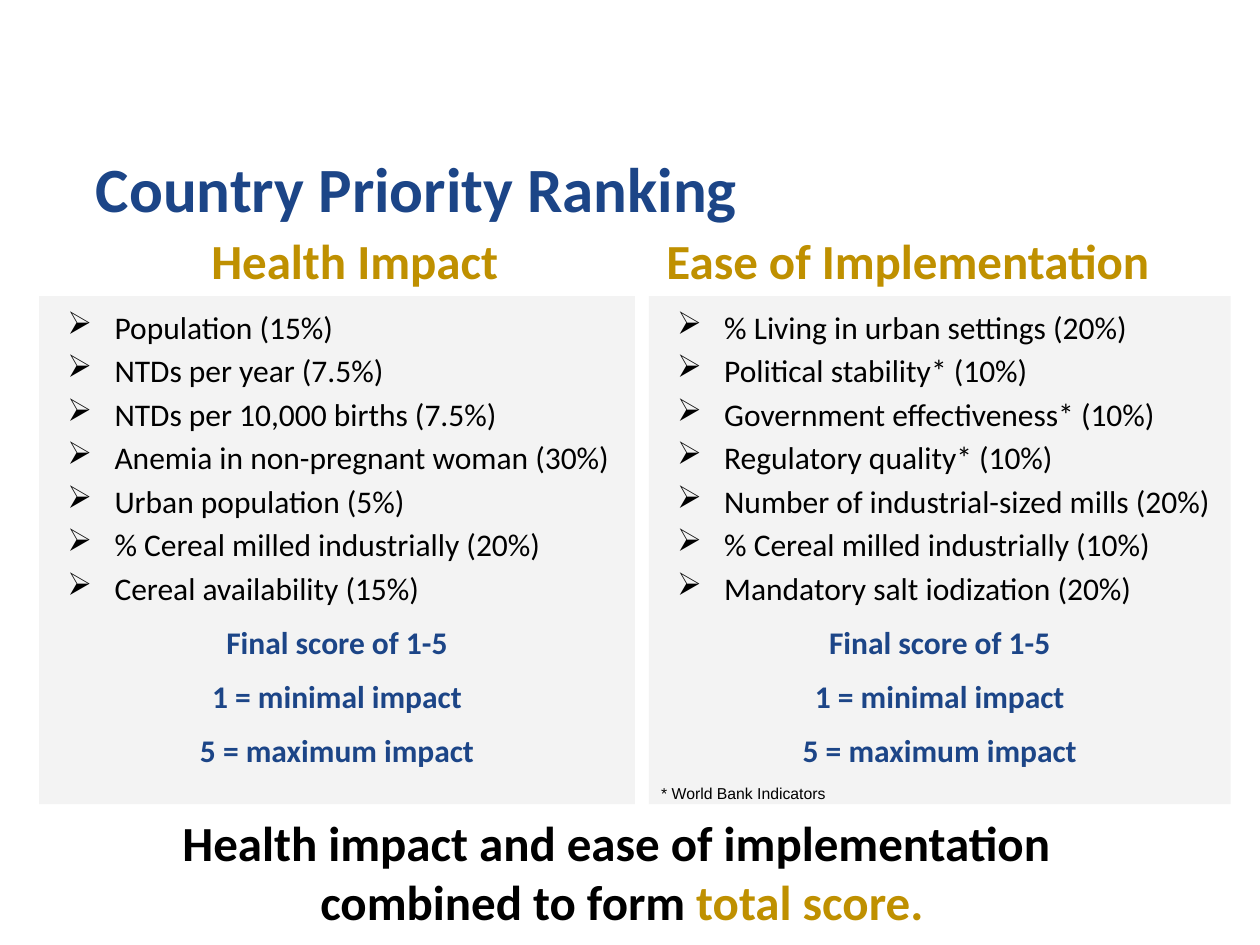
import pptx
import pptx.dml.color
import pptx.enum.shapes
import pptx.enum.text
import pptx.util
from lxml import etree
from pptx.util import Cm

BLUE, GOLD, BLACK, PANEL = "1C4587", "BF9000", "000000", "F3F3F3"
CENTER = pptx.enum.text.PP_ALIGN.CENTER
LEFT = pptx.enum.text.PP_ALIGN.LEFT
ANCHOR = pptx.enum.text.MSO_ANCHOR

HEALTH_FACTORS = [
    "Population (15%)",
    "NTDs per year (7.5%)",
    "NTDs per 10,000 births (7.5%)",
    "Anemia in non-pregnant woman (30%)",
    "Urban population (5%)",
    "% Cereal milled industrially (20%)",
    "Cereal availability (15%)",
]
EASE_FACTORS = [
    "% Living in urban settings (20%)",
    "Political stability* (10%)",
    "Government effectiveness* (10%)",
    "Regulatory quality* (10%)",
    "Number of industrial-sized mills (20%)",
    "% Cereal milled industrially (10%)",
    "Mandatory salt iodization (20%)",
]
SCORE_LINES = ["Final score of 1-5", "1 = minimal impact", "5 = maximum impact"]


def color(value):
    """Turn a hex string into a colour."""
    return pptx.dml.color.RGBColor.from_string(value)


def add_run(paragraph, text, size, fill, bold=False, font="Calibri"):
    """Add one formatted run to a paragraph."""
    run = paragraph.add_run()
    run.text = text
    run.font.name = font
    run.font.size = pptx.util.Pt(size)
    run.font.bold = bold
    run.font.color.rgb = color(fill)


def add_paragraph(frame, alignment=LEFT, line_spacing=1.0, before=0):
    """Return the next paragraph of a frame, using its empty first one."""
    first = frame.paragraphs[0]
    paragraph = frame.add_paragraph() if first.runs else first
    paragraph.alignment = alignment
    paragraph.line_spacing = line_spacing
    paragraph.space_before = pptx.util.Pt(before)
    return paragraph


def add_bullet(paragraph):
    """Give a paragraph a black arrow bullet with a hanging indent."""
    properties = paragraph._p.get_or_add_pPr()
    properties.set("marL", str(Cm(1.27)))
    properties.set("indent", str(-Cm(0.95)))
    namespace = pptx.oxml.ns.qn("a:buClr").removesuffix("buClr")
    bullet_color = etree.SubElement(properties, namespace + "buClr")
    etree.SubElement(bullet_color, namespace + "srgbClr", val=BLACK)
    etree.SubElement(properties, namespace + "buChar", char="➢")


def add_title(slide, text):
    """Place and format the title placeholder."""
    title = slide.shapes.title
    title.left, title.top, title.width, title.height = Cm(1.68), Cm(2.03), Cm(21.9), Cm(3.68)
    title.text_frame.vertical_anchor = ANCHOR.MIDDLE
    paragraph = add_paragraph(title.text_frame, line_spacing=0.9)
    add_run(paragraph, text, 36, BLUE, bold=True)


def add_heading(slide, text, left, width):
    """Add a gold heading that sits on top of a panel."""
    box = slide.shapes.add_textbox(left, Cm(3.68), width, Cm(2.29))
    box.text_frame.word_wrap = True
    box.text_frame.vertical_anchor = ANCHOR.BOTTOM
    add_run(add_paragraph(box.text_frame, CENTER, 0.9), text, 28, GOLD, bold=True)


def add_panel(slide, factors, left, width, footnote=None):
    """Add a grey panel with weighted factors, score lines and a footnote."""
    panel = slide.shapes.add_shape(
        pptx.enum.shapes.MSO_SHAPE.RECTANGLE, left, Cm(5.97), width, Cm(10.24)
    )
    panel.shadow.inherit = False
    panel.fill.solid()
    panel.fill.fore_color.rgb = color(PANEL)
    panel.line.fill.background()
    frame = panel.text_frame
    frame.word_wrap = True
    frame.vertical_anchor = ANCHOR.TOP
    for factor in factors:
        paragraph = add_paragraph(frame, line_spacing=1.15)
        add_bullet(paragraph)
        add_run(paragraph, factor, 18, BLACK)
    for line in SCORE_LINES:
        add_run(add_paragraph(frame, CENTER, 1.15, 6), line, 18, BLUE, bold=True)
    if footnote:
        add_run(add_paragraph(frame, LEFT, 0.9, 10), footnote, 9, BLACK, font="Arial")


def add_conclusion(slide, lines):
    """Add the closing statement, given as lines of (text, colour) runs."""
    box = slide.shapes.add_textbox(Cm(3.3), Cm(16.26), Cm(18.47), Cm(2.64))
    box.text_frame.word_wrap = False
    box.text_frame.auto_size = pptx.enum.text.MSO_AUTO_SIZE.SHAPE_TO_FIT_TEXT
    for line in lines:
        paragraph = add_paragraph(box.text_frame, CENTER)
        for text, fill in line:
            add_run(paragraph, text, 28, fill, bold=True)


def main():
    """Build the country ranking slide."""
    presentation = pptx.Presentation()
    presentation.slide_width, presentation.slide_height = Cm(25.4), Cm(19.05)
    slide = presentation.slides.add_slide(presentation.slide_layouts[5])
    add_title(slide, "Country Priority Ranking")
    add_heading(slide, "Health Impact", Cm(1.78), Cm(10.74))
    add_panel(slide, HEALTH_FACTORS, Cm(0.79), Cm(12.01))
    add_heading(slide, "Ease of Implementation", Cm(12.9), Cm(10.8))
    add_panel(slide, EASE_FACTORS, Cm(13.08), Cm(11.73), "* World Bank Indicators")
    add_conclusion(slide, [
        [("Health impact and ease of implementation ", BLACK)],
        [("combined to form ", BLACK), ("total score.", GOLD)],
    ])
    presentation.save("out.pptx")


if __name__ == "__main__":
    main()
